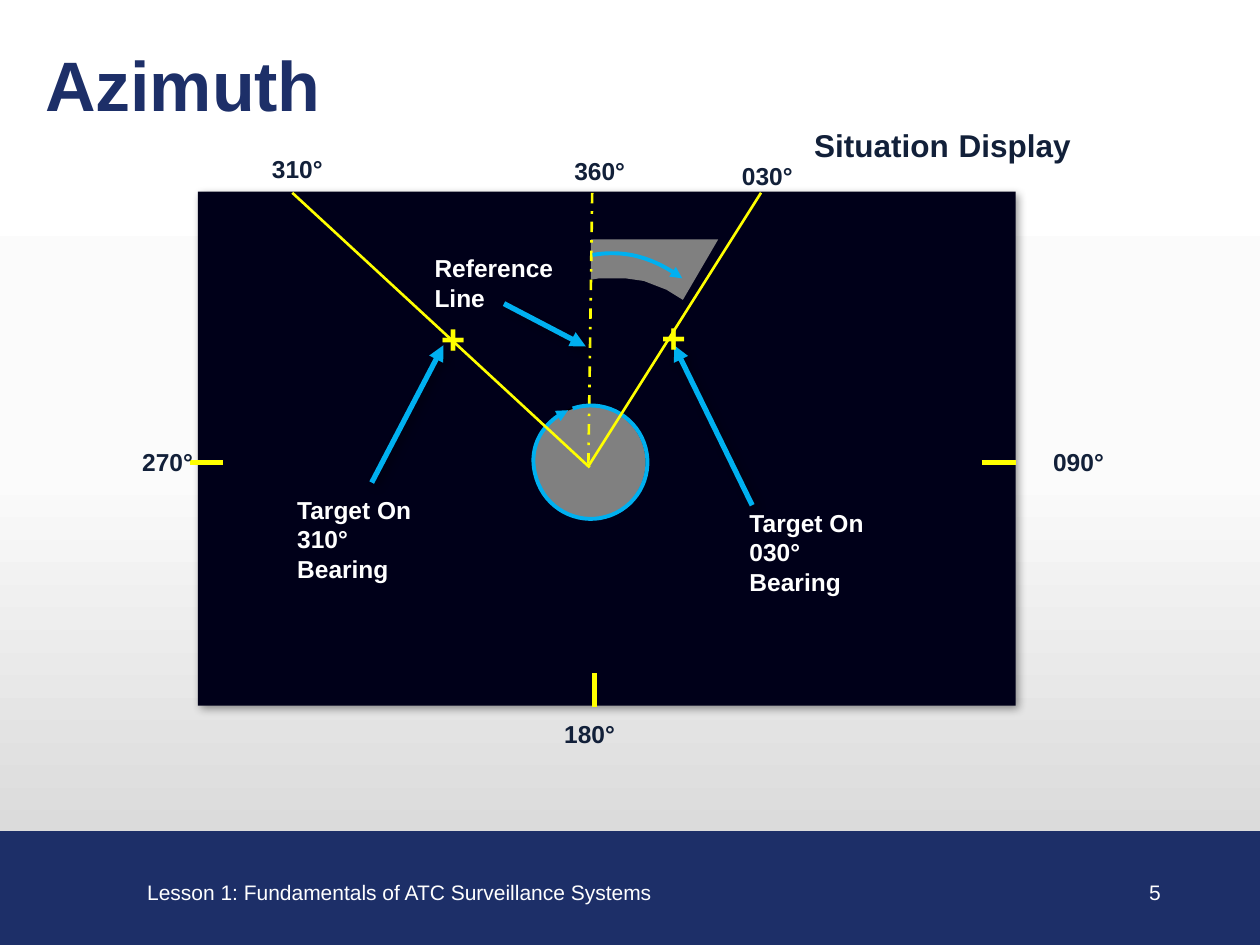
"""Build the Azimuth slide with its situation display diagram."""
from copy import deepcopy
from dataclasses import dataclass
from math import ceil, cos, radians, sin, tan

from lxml import etree
from pptx import Presentation
from pptx.dml.color import RGBColor
from pptx.enum.dml import MSO_LINE
from pptx.enum.shapes import MSO_CONNECTOR, MSO_SHAPE
from pptx.enum.text import MSO_ANCHOR, PP_ALIGN
from pptx.oxml import parse_xml
from pptx.oxml.ns import nsdecls, qn
from pptx.util import Inches, Pt

RECTANGLE, OVAL = MSO_SHAPE.RECTANGLE, MSO_SHAPE.OVAL
STRAIGHT = MSO_CONNECTOR.STRAIGHT
DASH_DOT = MSO_LINE.DASH_DOT
MIDDLE, TOP = MSO_ANCHOR.MIDDLE, MSO_ANCHOR.TOP
LEFT, CENTER, RIGHT = PP_ALIGN.LEFT, PP_ALIGN.CENTER, PP_ALIGN.RIGHT

COLORS = {
    "navy": "1D2F68", "ink": "122039", "display": "000019", "gray": "808080",
    "yellow": "FFFF00", "blue": "00B0F0", "white": "FFFFFF", "black": "000000",
}
BACKGROUND_STOPS = {0: "FFFFFF", 50: "FBFBFB", 100: "D0D0D0"}
FONT = "Arial"


@dataclass
class Label:
    text: str
    left: float
    top: float
    width: float
    height: float
    size: int = 14
    color: str = "ink"
    bold: bool = True
    align: PP_ALIGN = LEFT
    anchor: MSO_ANCHOR = TOP
    wrap: bool = True
    space_size: int | None = None


@dataclass
class Line:
    start: tuple[float, float]
    end: tuple[float, float]
    color: str = "yellow"
    width: float = 3
    dash: MSO_LINE | None = None
    arrow: bool = False


@dataclass
class Arc:
    center: tuple[float, float]
    radii: tuple[float, float]
    start_angle: float
    end_angle: float
    rotation: float


LABELS = [
    Label("Lesson 1: Fundamentals of ATC Surveillance Systems", 1.07, 6.93, 4.33, 0.3,
          12, "white", False, wrap=False),
    Label("5", 8.69, 6.93, 0.62, 0.3, 12, "white", False, RIGHT),
    Label("Azimuth", 0.26, 0.33, 9.27, 0.67, 40, "navy", anchor=MIDDLE),
    Label("Target On 310° Bearing", 2.26, 3.88, 1.31, 0.81, color="white"),
    Label("Reference Line", 3.35, 1.96, 1.28, 0.57, color="white"),
    Label("Target On 030° Bearing", 5.85, 3.98, 1.27, 0.81, color="white"),
    Label("270°", 1.03, 3.5, 0.85, 0.34),
    Label("090°", 8.26, 3.5, 0.87, 0.33),
    Label("180°", 4.38, 5.66, 0.86, 0.33),
    Label("360°", 4.46, 1.19, 0.84, 0.33),
    Label("310°", 2.06, 1.17, 0.86, 0.33),
    Label("030°", 5.79, 1.23, 0.87, 0.33),
    Label("Situation Display", 5.57, 0.92, 3.82, 0.43, 18, align=CENTER, space_size=20),
    Label("+", 5.15, 2.42, 0.33, 0.51, 24, "yellow", align=CENTER),
    Label("+", 3.4, 2.43, 0.33, 0.51, 24, "yellow", align=CENTER),
]
MARKS = [
    Line((4.7, 1.53), (4.67, 3.68), width=1.5, dash=DASH_DOT),
    Line((1.51, 3.67), (1.77, 3.67)),
    Line((7.79, 3.67), (8.06, 3.67)),
    Line((4.72, 5.61), (4.72, 5.34)),
    Line((5.97, 4.01), (5.35, 2.74), "blue", arrow=True),
    Line((4, 2.41), (4.65, 2.75), "blue", arrow=True),
    Line((2.95, 3.83), (3.52, 2.74), "blue", arrow=True),
]
BEARINGS = [
    Line((6.04, 1.53), (4.67, 3.7), width=1.5),
    Line((2.32, 1.53), (4.68, 3.71), width=1.5),
]
ARCS = [
    Arc((4.8, 3.2), (1.03, 1.24), -90, -49.3, 350.6),
    Arc((4.69, 3.67), (0.45, 0.45), -89, 266, 340.4),
]
WEDGE = [(4.69, 2.22), (4.69, 1.9), (5.7, 1.9), (5.42, 2.38), (5.29, 2.3),
         (5.11, 2.23), (4.97, 2.21), (4.86, 2.21), (4.75, 2.21), (4.69, 2.22)]


def rgb(name: str) -> RGBColor:
    """Look up a named colour."""
    return RGBColor.from_string(COLORS[name])


def set_background(slide) -> None:
    """Fill the slide from top to bottom with the gray gradient."""
    stops = "".join(f'<a:gs pos="{position * 1000}"><a:srgbClr val="{color}"/></a:gs>'
                    for position, color in BACKGROUND_STOPS.items())
    background = parse_xml(
        f'<p:bg {nsdecls("p", "a")}><p:bgPr><a:gradFill rotWithShape="1"><a:gsLst>{stops}'
        '</a:gsLst><a:lin ang="5400000" scaled="0"/></a:gradFill><a:effectLst/></p:bgPr></p:bg>')
    slide._element.cSld.insert(0, background)


def set_shadow(shape, visible: bool) -> None:
    """Give a shape the soft diagonal shadow, or none."""
    shadow = (f'<a:outerShdw blurRad="{Pt(5)}" dist="{Pt(3)}" dir="2700000" algn="tl">'
              f'<a:srgbClr val="{COLORS["black"]}"><a:alpha val="40000"/></a:srgbClr>'
              '</a:outerShdw>') if visible else ""
    shape._element.spPr.append(
        parse_xml(f'<a:effectLst {nsdecls("a")}>{shadow}</a:effectLst>'))


def set_line(shape, color: str, width: float, arrow: bool = False) -> None:
    """Set the outline and an optional arrowhead at its end."""
    shape.line.color.rgb = rgb(color)
    shape.line.width = Pt(width)
    if arrow:
        outline = shape._element.spPr.find(qn("a:ln"))
        etree.SubElement(outline, qn("a:tailEnd"), type="triangle")


def add_solid(slide, kind: MSO_SHAPE, box: tuple[float, ...], fill: str,
              line: str | None = None, shadow: bool = False, rotation: float = 0) -> None:
    """Draw a filled preset shape."""
    shape = slide.shapes.add_shape(kind, *map(Inches, box))
    shape.rotation = rotation
    shape.fill.solid()
    shape.fill.fore_color.rgb = rgb(fill)
    if line:
        set_line(shape, line, 0.75)
    else:
        shape.line.fill.background()
    set_shadow(shape, shadow)


def add_outline(slide, points: list[tuple[float, float]]):
    """Draw a closed freeform through points given in inches."""
    start, *rest = [(Inches(x), Inches(y)) for x, y in points]
    builder = slide.shapes.build_freeform(*start)
    builder.add_line_segments(rest, close=True)
    return builder.convert_to_shape()


def add_wedge(slide) -> None:
    """Draw the gray bearing wedge."""
    shape = add_outline(slide, WEDGE)
    shape.fill.solid()
    shape.fill.fore_color.rgb = rgb("gray")
    shape.line.fill.background()
    set_shadow(shape, False)


def arc_points(arc: Arc) -> list[tuple[float, float]]:
    """Return the start point and three Bezier points for each part of an arc."""
    parts = ceil((arc.end_angle - arc.start_angle) / 90)
    step = radians(arc.end_angle - arc.start_angle) / parts
    handle = 4 / 3 * tan(step / 4)

    def place(angle: float, offset: float) -> tuple[float, float]:
        """Place a point at an angle, moved along the tangent."""
        return (arc.center[0] + arc.radii[0] * (cos(angle) - offset * sin(angle)),
                arc.center[1] + arc.radii[1] * (sin(angle) + offset * cos(angle)))

    first = radians(arc.start_angle)
    points = [place(first, 0)]
    for part in range(parts):
        begin, end = first + part * step, first + (part + 1) * step
        points += [place(begin, handle), place(end, -handle), place(end, 0)]
    return points


def add_arc(slide, arc: Arc) -> None:
    """Draw a curved arrow over an invisible sector."""
    shape = add_outline(slide, arc_points(arc) + [arc.center])
    shape.rotation = arc.rotation
    shape.fill.background()
    sector = next(shape._element.iter(qn("a:path")))
    *segments, to_center = sector.findall(qn("a:lnTo"))
    for index in range(0, len(segments), 3):
        curve = etree.Element(qn("a:cubicBezTo"))
        segments[index].addprevious(curve)
        for segment in segments[index:index + 3]:
            curve.append(segment[0])
            sector.remove(segment)
    stroke = deepcopy(sector)
    for child in stroke[-2:]:
        stroke.remove(child)
    stroke.set("fill", "none")
    sector.set("stroke", "0")
    sector.addprevious(stroke)
    set_line(shape, "blue", 2.25, True)
    set_shadow(shape, False)


def add_line(slide, line: Line) -> None:
    """Draw a straight line or arrow."""
    connector = slide.shapes.add_connector(STRAIGHT, *map(Inches, line.start + line.end))
    if line.dash:
        connector.line.dash_style = line.dash
    set_line(connector, line.color, line.width, line.arrow)
    set_shadow(connector, line.arrow)


def add_label(slide, label: Label) -> None:
    """Draw a text box with one paragraph."""
    box = (label.left, label.top, label.width, label.height)
    text_frame = slide.shapes.add_textbox(*map(Inches, box)).text_frame
    text_frame.word_wrap = label.wrap
    text_frame.vertical_anchor = label.anchor
    paragraph = text_frame.paragraphs[0]
    paragraph.alignment = label.align
    for piece in label.text.partition(" ") if label.space_size else (label.text,):
        run = paragraph.add_run()
        run.text = piece
        run.font.name, run.font.bold = FONT, label.bold
        run.font.size = Pt(label.space_size if piece == " " else label.size)
        run.font.color.rgb = rgb(label.color)


def main() -> None:
    """Build and save the presentation."""
    presentation = Presentation()
    presentation.slide_width, presentation.slide_height = Inches(10), Inches(7.5)
    slide = presentation.slides.add_slide(presentation.slide_layouts[6])
    set_background(slide)
    add_solid(slide, RECTANGLE, (-0.02, 6.6, 10.02, 0.9), "navy", "navy")
    add_solid(slide, RECTANGLE, (1.57, 1.52, 6.49, 4.08), "display", shadow=True)
    add_wedge(slide)
    add_solid(slide, OVAL, (4.23, 3.22, 0.9, 0.9), "gray", "black", rotation=31.4)
    for draw, items in ((add_line, MARKS), (add_arc, ARCS), (add_line, BEARINGS),
                        (add_label, LABELS)):
        for item in items:
            draw(slide, item)
    presentation.save("out.pptx")


if __name__ == "__main__":
    main()
